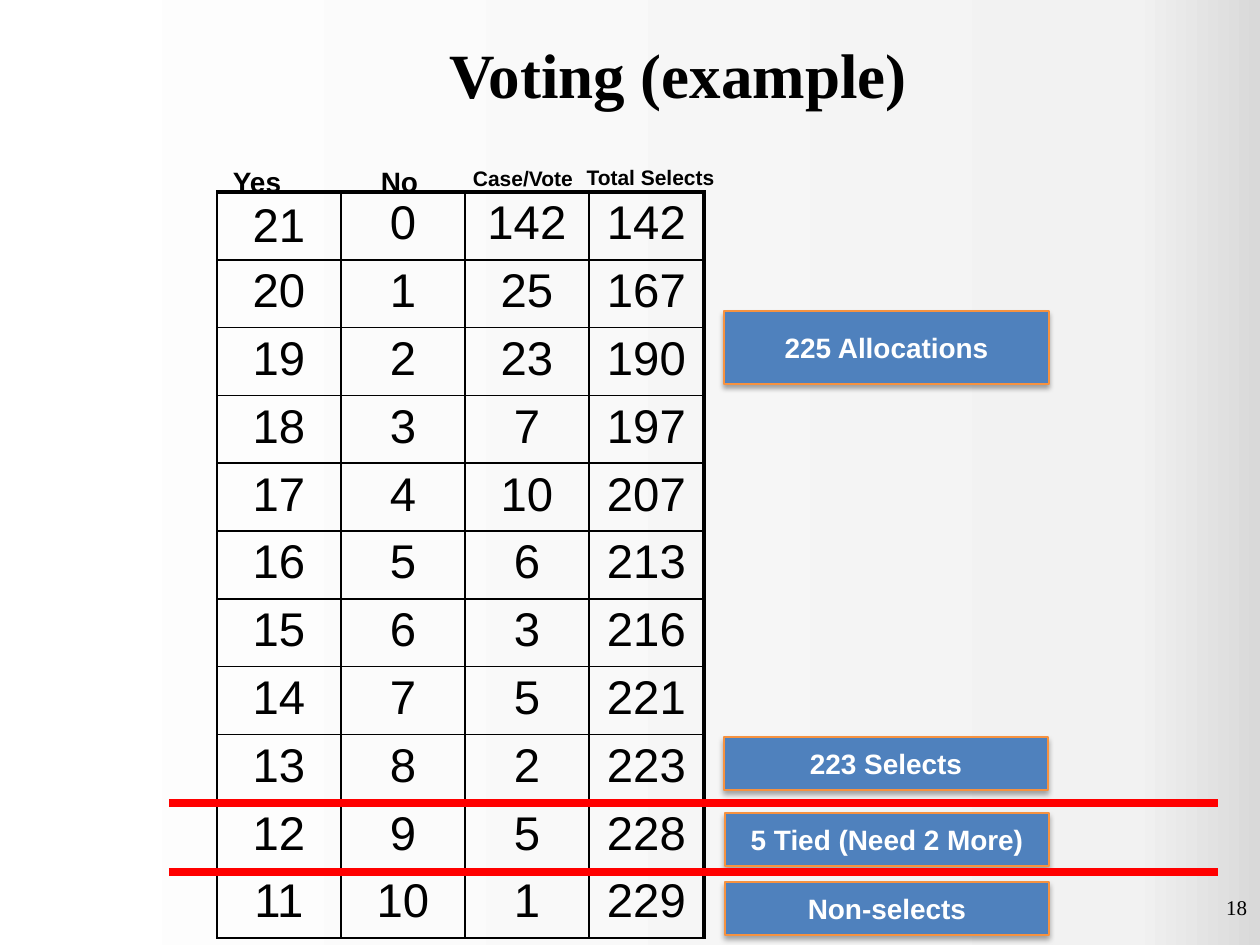
from copy import deepcopy

from lxml.etree import SubElement
from pptx import Presentation
from pptx.dml.color import RGBColor
from pptx.enum.shapes import MSO_CONNECTOR, MSO_SHAPE
from pptx.enum.text import MSO_ANCHOR, PP_ALIGN
from pptx.oxml.ns import qn
from pptx.util import Emu, Pt

PX = 914400 // 126  # 126 px to the inch

COLORS = {
    "text": "000000",
    "box": "4F81BD",
    "box_line": "F69240",
    "box_text": "FFFFFF",
    "cutoff": "FF0000",
}
BACKGROUND_STOPS = [(0, "FFFFFF"), (0.9, "F2F2F2"), (1, "D9D9D9")]

# Number of cases for each vote split, from 21-0 down to 11-10
VOTERS = 21
CASES = [142, 25, 23, 7, 10, 6, 3, 5, 2, 5, 1]

HEADINGS = [
    ("Yes", (233, 149, 89, 49), 16, PP_ALIGN.LEFT),
    ("No", (355, 149, 89, 49), 16, PP_ALIGN.CENTER),
    ("Case/Vote", (473, 147, 125, 44), 12, PP_ALIGN.LEFT),
    ("Total Selects", (578, 142, 145, 48), 12, PP_ALIGN.CENTER),
]
CALLOUTS = [
    ("Non-selects", (725, 882, 324, 53)),
    ("225 Allocations", (724, 311, 325, 73)),
    ("223 Selects", (724, 737, 324, 53)),
    ("5 Tied (Need 2 More)", (725, 813, 324, 53)),
]
CUTOFFS = [803, 872]


def px(*values):
    return [Emu(value * PX) for value in values]


def color(name):
    return RGBColor.from_string(COLORS[name])


def write(text_frame, text, size, align=PP_ALIGN.CENTER, font="Arial",
          bold=False, color_name="text"):
    text_frame.text = text
    paragraph = text_frame.paragraphs[0]
    paragraph.alignment = align
    run_font = paragraph.runs[0].font
    run_font.name, run_font.size, run_font.bold = font, Pt(size), bold
    run_font.color.rgb = color(color_name)


def set_background(slide):
    fill = slide.background.fill
    fill.gradient()
    fill.gradient_angle = 0
    stop_list = next(slide.element.iter(qn("a:gsLst")))
    stop_list.append(deepcopy(stop_list[-1]))
    for stop, (position, hex_color) in zip(fill.gradient_stops, BACKGROUND_STOPS):
        stop.position = position
        stop.color.rgb = RGBColor.from_string(hex_color)


def add_title(slide, text):
    title = slide.shapes.title
    title.left, title.top, title.width, title.height = px(147, 0, 1062, 147)
    write(title.text_frame, text, 36, font="Times New Roman", bold=True)
    title.text_frame.vertical_anchor = MSO_ANCHOR.MIDDLE


def set_border(cell, side, width):
    line = SubElement(cell._tc.get_or_add_tcPr(), qn(f"a:ln{side}"), w=str(Pt(width)))
    fill = SubElement(line, qn("a:solidFill"))
    SubElement(fill, qn("a:srgbClr"), val=COLORS["text"])


def add_vote_table(slide):
    rows, total = [], 0
    for no_votes, cases in enumerate(CASES):
        total += cases
        rows.append((VOTERS - no_votes, no_votes, cases, total))

    frame = slide.shapes.add_table(len(rows), 4, *px(217, 192, 487, 746))
    table = frame.table
    table.first_row = table.horz_banding = False
    for column, width in zip(table.columns, px(124, 124, 124, 115)):
        column.width = width
    for row_index, values in enumerate(rows):
        table.rows[row_index].height = Emu(746 * PX // len(rows))
        for column_index, value in enumerate(values):
            cell = table.cell(row_index, column_index)
            cell.margin_left, cell.margin_right = px(11, 11)
            cell.margin_top, cell.margin_bottom = px(5, 5)
            write(cell.text_frame, str(value), 27)
            # Heavy top and right outer edges
            set_border(cell, "L", 1)
            set_border(cell, "R", 2.25 if column_index == 3 else 1)
            set_border(cell, "T", 2.25 if row_index == 0 else 1)
            set_border(cell, "B", 1)
            cell.fill.background()
    table.cell(0, 0).vertical_anchor = MSO_ANCHOR.MIDDLE


def add_label(slide, text, box, size, align, margins=(0, 0), **style):
    text_frame = slide.shapes.add_textbox(*px(*box)).text_frame
    text_frame.word_wrap = True
    text_frame.vertical_anchor = MSO_ANCHOR.BOTTOM
    horizontal, vertical = px(*margins)
    text_frame.margin_left = text_frame.margin_right = horizontal
    text_frame.margin_top = text_frame.margin_bottom = vertical
    write(text_frame, text, size, align, **style)


def add_callout(slide, text, box):
    shape = slide.shapes.add_shape(MSO_SHAPE.RECTANGLE, *px(*box))
    shape.fill.solid()
    shape.fill.fore_color.rgb = color("box")
    shape.line.color.rgb = color("box_line")
    shape.line.width = Pt(0.75)
    # Soft shadow straight below
    shape.shadow.inherit = False
    effects = shape.element.spPr.find(qn("a:effectLst"))
    shadow = SubElement(effects, qn("a:outerShdw"), blurRad=str(Pt(3.1)),
                        dist=str(Pt(1.8)), dir="5400000", rotWithShape="0")
    shade = SubElement(shadow, qn("a:srgbClr"), val=COLORS["text"])
    SubElement(shade, qn("a:alpha"), val="35000")
    write(shape.text_frame, text, 16, bold=True, color_name="box_text")
    shape.text_frame.vertical_anchor = MSO_ANCHOR.MIDDLE


def add_cutoff(slide, y):
    line = slide.shapes.add_connector(MSO_CONNECTOR.STRAIGHT, *px(169, y, 1218, y))
    line.line.color.rgb = color("cutoff")
    line.line.width = Pt(4.5)
    SubElement(line.element.spPr, qn("a:effectLst"))


def main():
    presentation = Presentation()
    presentation.slide_width, presentation.slide_height = px(1260, 945)
    slide = presentation.slides.add_slide(presentation.slide_layouts[5])
    set_background(slide)
    add_title(slide, "Voting (example)")

    # Votes and their column headings
    add_vote_table(slide)
    for text, box, size, align in HEADINGS:
        add_label(slide, text, box, size, align, bold=True)

    # Cutoff lines and the notes beside the table
    add_cutoff(slide, CUTOFFS[0])
    for text, box in CALLOUTS:
        add_callout(slide, text, box)
    add_cutoff(slide, CUTOFFS[1])

    # Slide number
    add_label(slide, "18", (966, 876, 294, 50), 12, PP_ALIGN.RIGHT,
              margins=(13, 6), font="Times New Roman")
    presentation.save("out.pptx")


if __name__ == "__main__":
    main()
